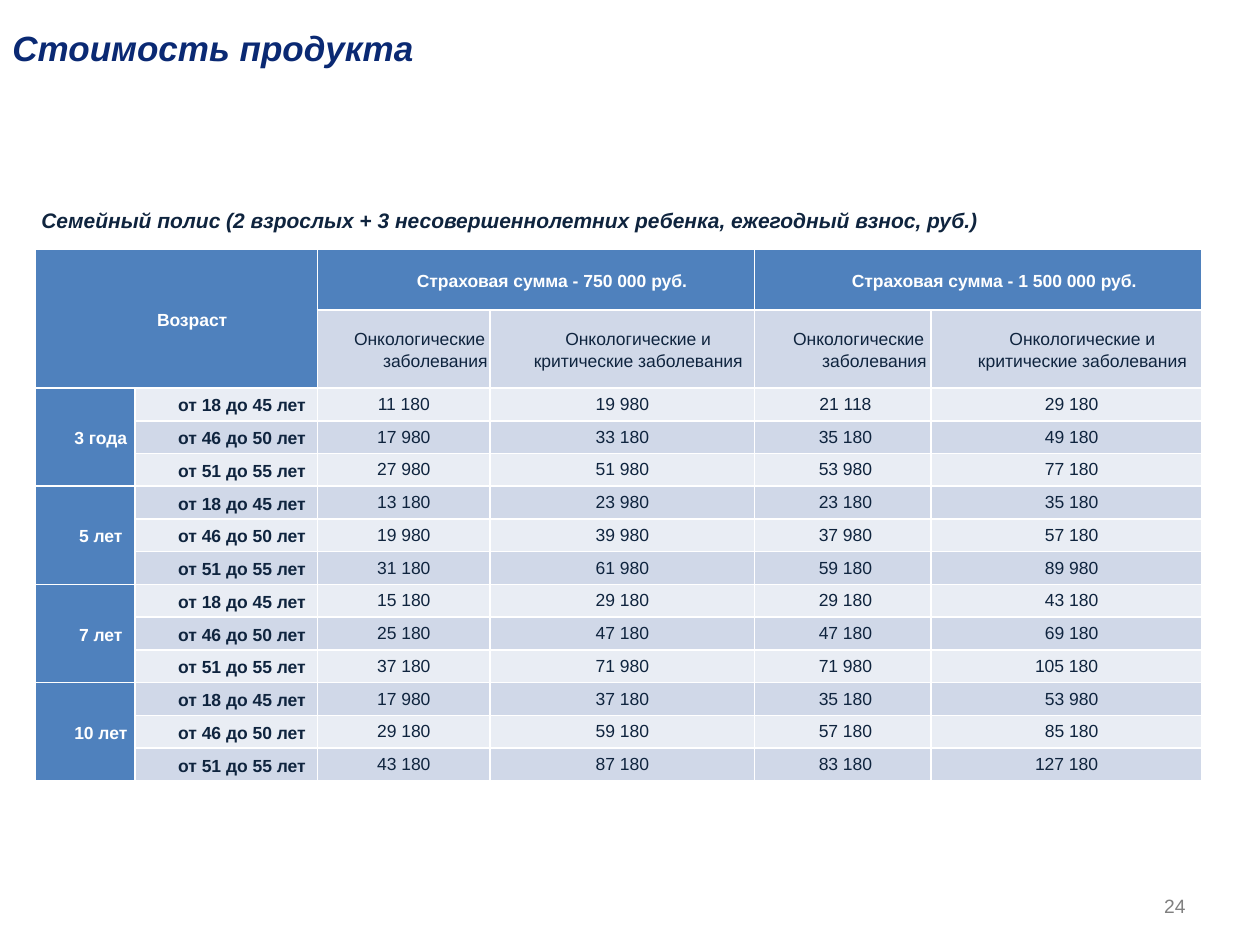
from lxml.etree import SubElement
from pptx import Presentation
from pptx.dml.color import RGBColor
from pptx.enum.text import MSO_ANCHOR, PP_ALIGN
from pptx.oxml import parse_xml
from pptx.oxml.ns import nsdecls, qn
from pptx.util import Inches, Pt

WIDE, HIGH = Inches(10), Inches(7.5)
HUES = {
    "title": "0A2973", "ink": "0F243E", "page": "808080", "white": "FFFFFF",
    "head": "4F81BD", "dark": "D0D8E8", "light": "E9EDF4",
}
COLS = [0.79, 1.45, 1.37, 2.1, 1.4, 2.15]
ROWS = [0.48, 0.62] + [0.26] * 12
SUMS = ["Страховая сумма - 750 000 руб.", "Страховая сумма - 1 500 000 руб."]
RISKS = ["Онкологические заболевания", "Онкологические и\nкритические заболевания"]
TERMS = ["3 года", "5 лет", "7 лет", "10 лет"]
AGES = ["от 18 до 45 лет", "от 46 до 50 лет", "от 51 до 55 лет"]
COSTS = [
    ["11 180", "19 980", "21 118", "29 180"],
    ["17 980", "33 180", "35 180", "49 180"],
    ["27 980", "51 980", "53 980", "77 180"],
    ["13 180", "23 980", "23 180", "35 180"],
    ["19 980", "39 980", "37 980", "57 180"],
    ["31 180", "61 980", "59 180", "89 980"],
    ["15 180", "29 180", "29 180", "43 180"],
    ["25 180", "47 180", "47 180", "69 180"],
    ["37 180", "71 980", "71 980", "105 180"],
    ["17 980", "37 180", "35 180", "53 980"],
    ["29 180", "59 180", "57 180", "85 180"],
    ["43 180", "87 180", "83 180", "127 180"],
]


def color(name):
    return RGBColor.from_string(HUES[name])


def write(frame, text, size=10, hue="ink", bold=False, italic=False,
          align=PP_ALIGN.LEFT, hang=False):
    """Fill a text frame, one paragraph a line; hang sets the label indent."""
    frame.word_wrap = True
    for i, line in enumerate(text.split("\n")):
        para = frame.paragraphs[0] if i == 0 else frame.add_paragraph()
        para.alignment = align
        if hang:
            para.line_spacing = 1.15
            props = para._p.get_or_add_pPr()
            props.set("marL", str(Inches(0.5)))
            props.set("indent", str(Inches(-0.25)))
        run = para.add_run()
        run.text = line
        font = run.font
        font.name, font.size = "Arial", Pt(size)
        font.bold, font.italic = bold, italic
        font.color.rgb = color(hue)


def label(slide, left, top, width, height, text, **style):
    """Add a text box placed by shares of the slide's size."""
    box = slide.shapes.add_textbox(
        int(WIDE * left), int(HIGH * top), int(WIDE * width), int(HIGH * height))
    box.text_frame.vertical_anchor = style.pop("anchor", MSO_ANCHOR.TOP)
    write(box.text_frame, text, **style)


def edge(cell):
    """Give all four sides of a cell a thin white line."""
    props = cell._tc.get_or_add_tcPr()
    for i, side in enumerate("LRTB"):
        line = parse_xml(f'<a:ln{side} {nsdecls("a")} w="{Pt(1)}"/>')
        fill = SubElement(line, qn("a:solidFill"))
        SubElement(fill, qn("a:srgbClr")).set("val", HUES["white"])
        props.insert(i, line)


def paint(cell, text, fill="head", left=0, right=0, **style):
    cell.fill.solid()
    cell.fill.fore_color.rgb = color(fill)
    cell.vertical_anchor = MSO_ANCHOR.MIDDLE
    cell.margin_left, cell.margin_right = Inches(left), Inches(right)
    cell.margin_top = cell.margin_bottom = 0
    write(cell.text_frame, text, align=PP_ALIGN.CENTER, **style)


def grid(slide):
    """Add the table with its sizes, merged cells and lines."""
    frame = slide.shapes.add_table(
        len(ROWS), len(COLS), int(WIDE * 0.028), int(HIGH * 0.264),
        Inches(sum(COLS)), Inches(sum(ROWS)))
    table = frame.table
    table.first_row = table.horz_banding = False
    for col, width in zip(table.columns, COLS):
        col.width = Inches(width)
    for row, height in zip(table.rows, ROWS):
        row.height = Inches(height)
    for cell in table.iter_cells():
        edge(cell)
    table.cell(0, 0).merge(table.cell(1, 1))
    for col in (2, 4):
        table.cell(0, col).merge(table.cell(0, col + 1))
    for row in range(2, len(ROWS), len(AGES)):
        table.cell(row, 0).merge(table.cell(row + 2, 0))
    return table


def heads(table):
    style = dict(hue="white", bold=True, hang=True)
    paint(table.cell(0, 0), "Возраст", **style)
    for i, text in enumerate(SUMS):
        paint(table.cell(0, 2 + 2 * i), text, **style)
        for j, risk in enumerate(RISKS):
            paint(table.cell(1, 2 + 2 * i + j), risk, fill="dark", hang=True)
    for i, term in enumerate(TERMS):
        paint(table.cell(2 + len(AGES) * i, 0), term,
              left=0.05, right=0.05, **style)


def body(table):
    for i, costs in enumerate(COSTS):
        fill = "dark" if i % 2 else "light"
        paint(table.cell(i + 2, 1), AGES[i % len(AGES)], fill=fill,
              bold=True, hang=True)
        for j, cost in enumerate(costs):
            # Shorter numbers in the last column line up with the longest.
            left = 0.15 if j == 3 and len(cost) < 7 else 0.11 if j == 2 else 0.07
            paint(table.cell(i + 2, j + 2), cost, fill=fill, left=left, right=0.07)


def main():
    deck = Presentation()
    deck.slide_width, deck.slide_height = WIDE, HIGH
    slide = deck.slides.add_slide(deck.slide_layouts[6])
    label(slide, 0, 0, 1, 0.1, "Стоимость продукта", size=20, hue="title",
          bold=True, italic=True, anchor=MSO_ANCHOR.MIDDLE)
    label(slide, 0.023, 0.213, 0.835, 0.04,
          "Семейный полис (2 взрослых + 3 несовершеннолетних ребенка, "
          "ежегодный взнос, руб.)", size=12, bold=True, italic=True)
    table = grid(slide)
    heads(table)
    body(table)
    label(slide, 0.914, 0.94, 0.075, 0.05, "24", size=11, hue="page")
    deck.save("out.pptx")


if __name__ == "__main__":
    main()
